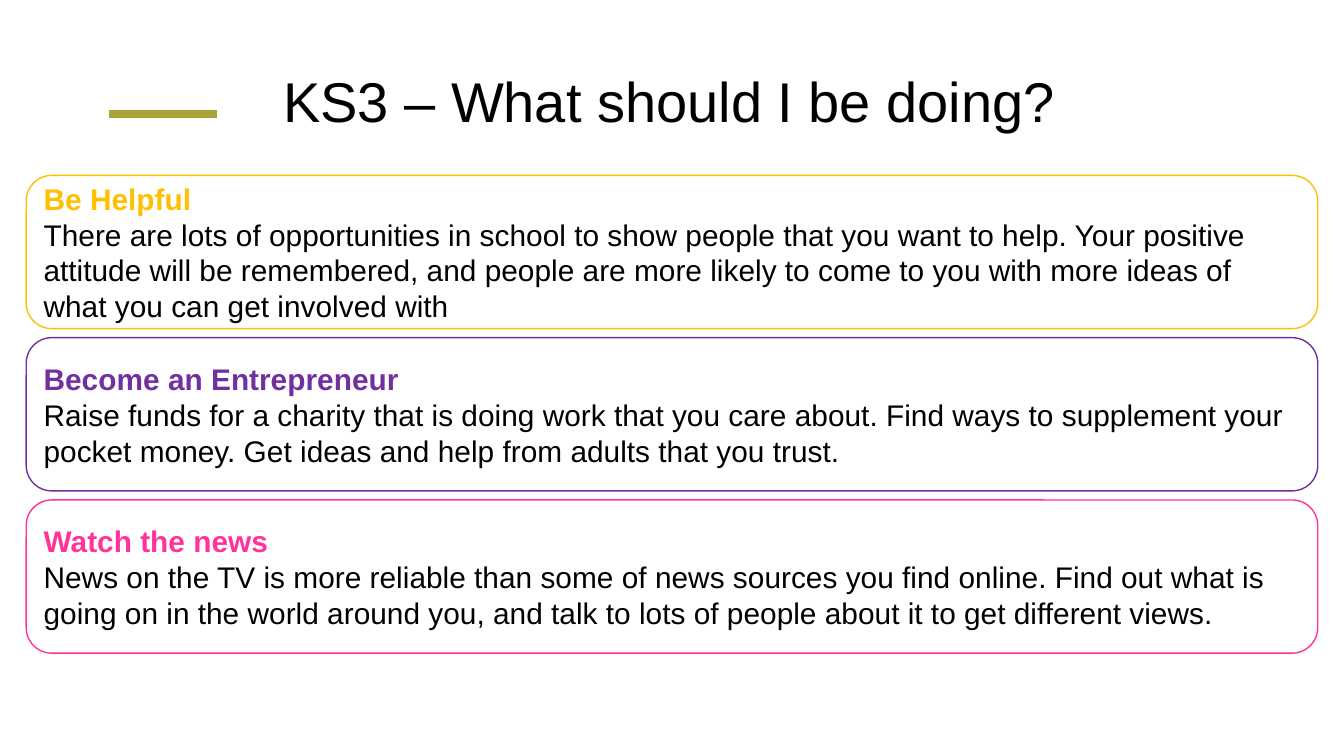
"""Build the KS3 advice slide with three outlined cards."""
from lxml.etree import SubElement
from pptx import Presentation
from pptx.dml.color import RGBColor
from pptx.enum.shapes import MSO_CONNECTOR, MSO_SHAPE
from pptx.enum.text import MSO_ANCHOR, PP_ALIGN
from pptx.oxml.ns import qn
from pptx.util import Inches, Pt

COLOURS = {
    "text": "000000",
    "accent": "A7A537",
    "helpful": "FFC000",
    "entrepreneur": "7030A0",
    "news": "FF3399",
}
TITLE = "KS3 – What should I be doing?"
CARDS = [
    ("helpful", "Be Helpful",
     "There are lots of opportunities in school to show people that you want to help. "
     "Your positive attitude will be remembered, and people are more likely to come to "
     "you with more ideas of what you can get involved with"),
    ("entrepreneur", "Become an Entrepreneur",
     "Raise funds for a charity that is doing work that you care about. Find ways to "
     "supplement your pocket money. Get ideas and help from adults that you trust."),
    ("news", "Watch the news",
     "News on the TV is more reliable than some of news sources you find online. Find "
     "out what is going on in the world around you, and talk to lots of people about it "
     "to get different views."),
]
CARD_LEFT, CARD_TOP, CARD_WIDTH, CARD_HEIGHT = 0.26, 1.74, 12.81, 1.52
CARD_PITCH = 1.61
CARD_TEXT_SIZE = 21.33


def colour(name):
    return RGBColor.from_string(COLOURS[name])


def style(paragraph, size, colour_name, bold=False):
    paragraph.alignment = PP_ALIGN.LEFT
    paragraph.line_spacing = 1.0
    for run in paragraph.runs:
        run.font.name = "Arial"
        run.font.size = Pt(size)
        run.font.bold = bold
        run.font.color.rgb = colour(colour_name)


def add_title(slide):
    box = slide.shapes.add_textbox(Inches(2.71), Inches(0.61), Inches(11.33), Inches(1.44))
    text_frame = box.text_frame
    text_frame.word_wrap = True
    text_frame.text = TITLE
    style(text_frame.paragraphs[0], 40, "text")


def add_accent(slide):
    line = slide.shapes.add_connector(
        MSO_CONNECTOR.STRAIGHT, Inches(1.08), Inches(1.13), Inches(2.15), Inches(1.13))
    line.line.color.rgb = colour("accent")
    line.line.width = Pt(6)
    SubElement(line._element.spPr, qn("a:effectLst"))


def add_card(slide, index, colour_name, heading, body):
    top = CARD_TOP + index * CARD_PITCH
    shape = slide.shapes.add_shape(
        MSO_SHAPE.ROUNDED_RECTANGLE, Inches(CARD_LEFT), Inches(top),
        Inches(CARD_WIDTH), Inches(CARD_HEIGHT))
    shape.shadow.inherit = False
    shape.fill.background()
    shape.line.color.rgb = colour(colour_name)
    shape.line.width = Pt(1)
    text_frame = shape.text_frame
    text_frame.word_wrap = True
    text_frame.margin_right = Inches(0.15)
    text_frame.vertical_anchor = MSO_ANCHOR.MIDDLE
    text_frame.text = f"{heading}\n{body}"
    style(text_frame.paragraphs[0], CARD_TEXT_SIZE, colour_name, bold=True)
    style(text_frame.paragraphs[1], CARD_TEXT_SIZE, "text")


def main():
    presentation = Presentation()
    presentation.slide_width = Inches(13.33)
    presentation.slide_height = Inches(7.5)
    slide = presentation.slides.add_slide(presentation.slide_layouts[6])
    add_accent(slide)
    add_title(slide)
    for index, card in enumerate(CARDS):
        add_card(slide, index, *card)
    presentation.save("out.pptx")


if __name__ == "__main__":
    main()
